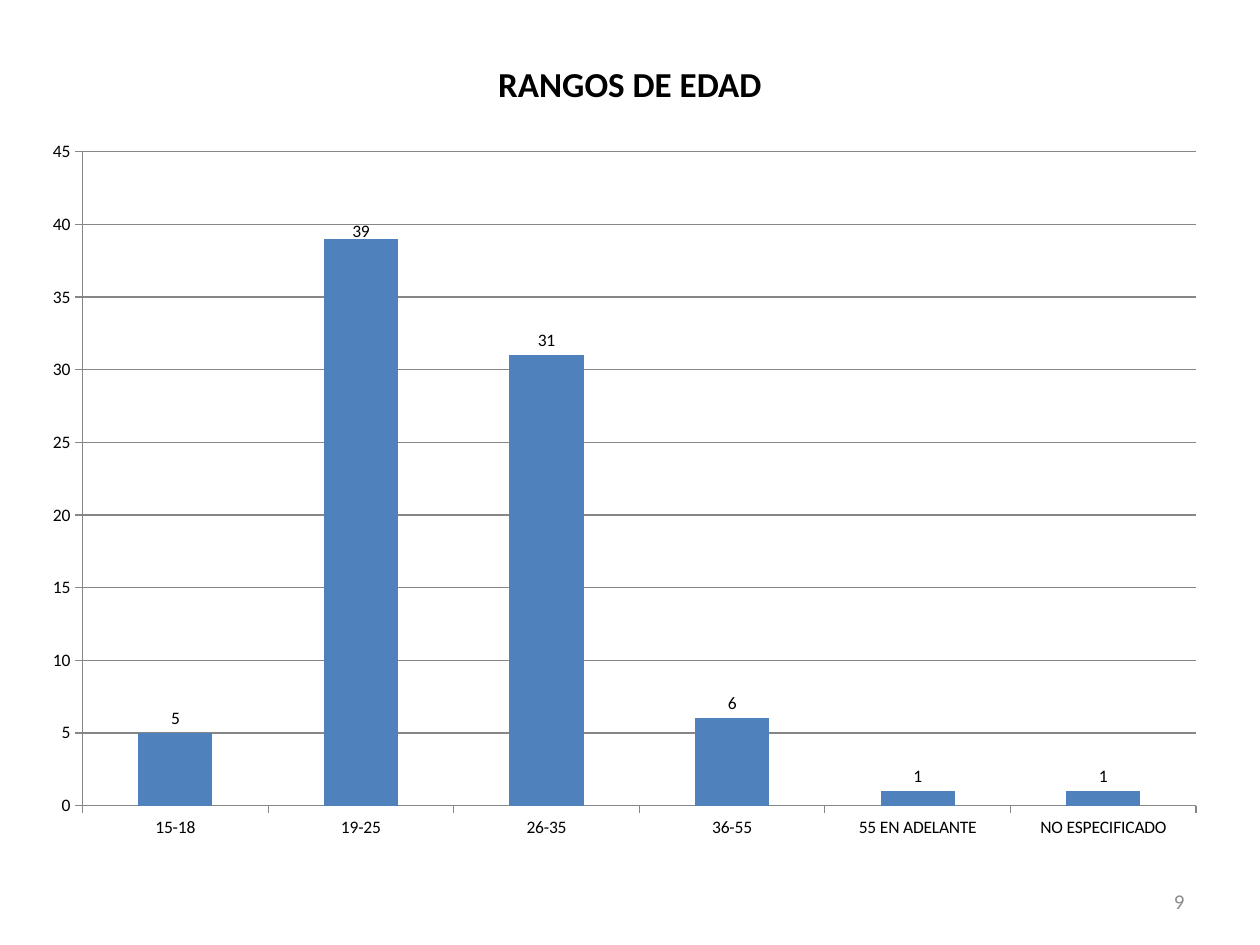
"""Builds the age range slide with its column chart."""
from dataclasses import dataclass

from lxml import etree
from pptx import Presentation
from pptx import util as u
from pptx.chart.data import CategoryChartData
from pptx.dml.color import RGBColor
from pptx.enum import chart as ch
from pptx.enum import text
from pptx.oxml.ns import qn

PX = 914400 / 126
FONT = "Calibri"
BLACK = RGBColor(0, 0, 0)
GREY = RGBColor(0x8C, 0x8C, 0x8C)
RULE = RGBColor(0x86, 0x86, 0x86)
BLUE = RGBColor(0x4F, 0x81, 0xBD)
AGES = {"15-18": 5, "19-25": 39, "26-35": 31, "36-55": 6,
        "55 EN ADELANTE": 1, "NO ESPECIFICADO": 1}


@dataclass(frozen=True)
class Box:
    """A rectangle in px."""
    left: int
    top: int
    width: int
    height: int

    def emu(self) -> tuple:
        """Return the four lengths in EMU."""
        return tuple(u.Emu(round(n * PX))
                     for n in (self.left, self.top, self.width, self.height))


@dataclass(frozen=True)
class Line:
    """A line of text with its place and format."""
    words: str
    box: Box
    size: int
    color: RGBColor
    bold: bool
    align: text.PP_ALIGN


TITLE = Line("RANGOS DE EDAD", Box(63, 38, 1134, 91), 20, BLACK, True, text.PP_ALIGN.CENTER)
NUMBER = Line("9", Box(903, 876, 294, 50), 12, GREY, False, text.PP_ALIGN.RIGHT)
CHART = Box(29, 128, 1191, 725)
PLOT = Box(83, 152, 1114, 654)


def set_all(target, values: dict) -> None:
    """Set each named attribute on the target."""
    for name, value in values.items():
        setattr(target, name, value)


def format_font(font, size: int, color: RGBColor, bold: bool = False) -> None:
    """Apply the slide font."""
    set_all(font, {"name": FONT, "size": u.Pt(size), "bold": bold})
    font.color.rgb = color


def write(holder, line: Line) -> None:
    """Place a line of text in a shape."""
    set_all(holder, dict(zip(("left", "top", "width", "height"), line.box.emu())))
    frame = holder.text_frame
    set_all(frame, {"text": line.words, "word_wrap": True,
                    "vertical_anchor": text.MSO_ANCHOR.MIDDLE})
    paragraph = frame.paragraphs[0]
    paragraph.alignment = line.align
    format_font(paragraph.runs[0].font, line.size, line.color, line.bold)


def set_layout(parent, index: int, values: dict) -> None:
    """Give a chart part a manual layout."""
    for old in parent.findall(qn("c:layout")):
        parent.remove(old)
    layout = etree.Element(qn("c:layout"))
    manual = etree.SubElement(layout, qn("c:manualLayout"))
    for name, value in values.items():
        etree.SubElement(manual, qn(f"c:{name}")).set("val", str(value))
    parent.insert(index, layout)


def draw_ages(slide) -> None:
    """Draw the column chart of ages."""
    data = CategoryChartData()
    data.categories = list(AGES)
    data.add_series("Series 1", list(AGES.values()))
    chart = slide.shapes.add_chart(
        ch.XL_CHART_TYPE.COLUMN_CLUSTERED, *CHART.emu(), data).chart
    set_all(chart, {"has_legend": False, "has_title": False})
    format_font(chart.font, 10, BLACK)

    for axis in (chart.category_axis, chart.value_axis):
        set_all(axis, {"major_tick_mark": ch.XL_TICK_MARK.OUTSIDE,
                       "minor_tick_mark": ch.XL_TICK_MARK.NONE})
        axis.format.line.color.rgb = RULE
    set_all(chart.value_axis, {"minimum_scale": 0, "maximum_scale": 45,
                               "major_unit": 5, "has_major_gridlines": True})
    chart.value_axis.major_gridlines.format.line.color.rgb = RULE

    columns = chart.plots[0]
    set_all(columns, {"gap_width": 150, "vary_by_categories": False})
    ages = columns.series[0]
    ages.format.fill.solid()
    ages.format.fill.fore_color.rgb = BLUE
    set_all(ages.data_labels, {"show_value": True,
                               "position": ch.XL_LABEL_POSITION.OUTSIDE_END})
    format_font(ages.data_labels.font, 10, BLACK)

    tallest = ages.points[1].data_label
    format_font(tallest.font, 10, BLACK)
    tallest.position = ch.XL_LABEL_POSITION.OUTSIDE_END
    label = ages.data_labels._element.find(qn("c:dLbl"))
    set_layout(label, 1, {"x": 0, "y": 0.01})
    set_layout(columns._element.getparent(), 0, {
        "layoutTarget": "inner", "xMode": "edge", "yMode": "edge",
        "x": round((PLOT.left - CHART.left) / CHART.width, 3),
        "y": round((PLOT.top - CHART.top) / CHART.height, 3),
        "w": round(PLOT.width / CHART.width, 3),
        "h": round(PLOT.height / CHART.height, 3)})


def main() -> None:
    """Build and save the slide."""
    deck = Presentation()
    set_all(deck, {"slide_width": u.Inches(10), "slide_height": u.Inches(7.5)})
    slide = deck.slides.add_slide(deck.slide_layouts[5])
    write(slide.shapes.title, TITLE)
    write(slide.shapes.add_textbox(*NUMBER.box.emu()), NUMBER)
    draw_ages(slide)
    deck.save("out.pptx")


if __name__ == "__main__":
    main()
